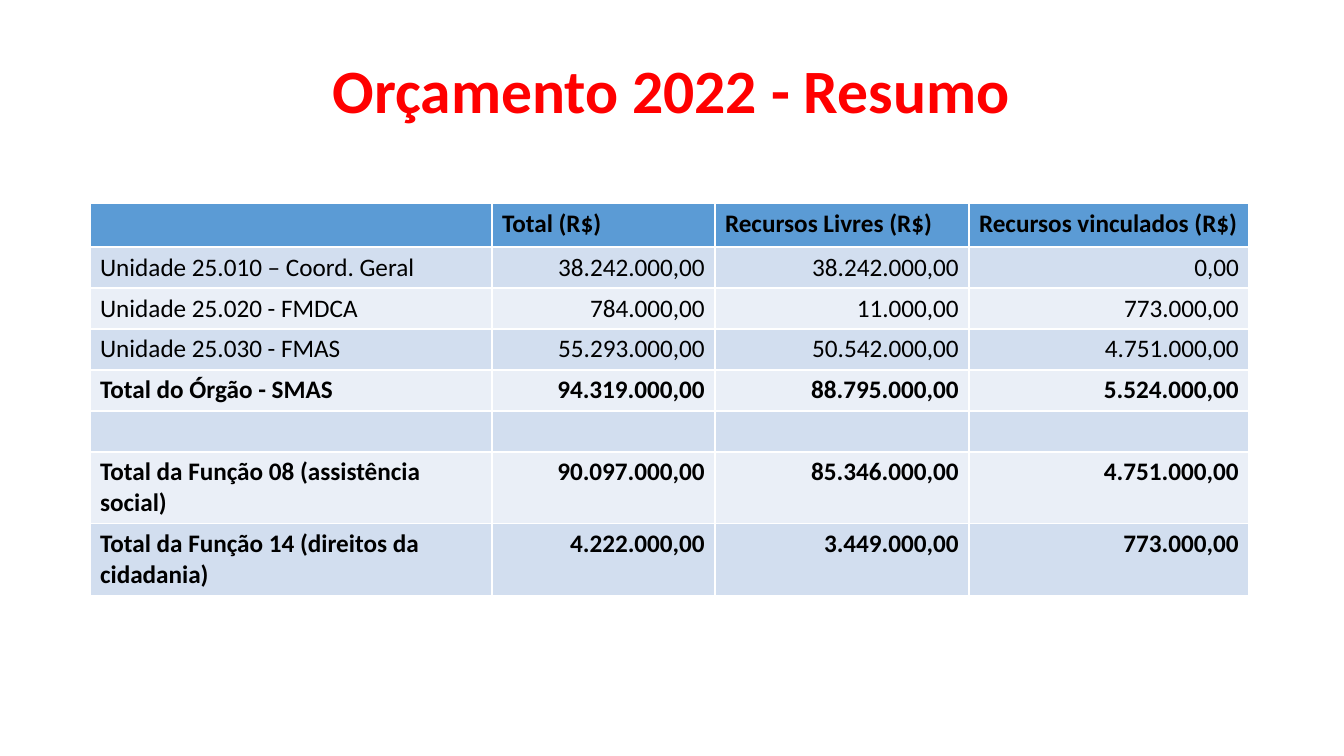
from pptx import Presentation
from pptx.dml.color import RGBColor
from pptx.enum.text import MSO_ANCHOR, PP_ALIGN
from pptx.util import Pt

EMU_PER_PX = 914400 / 100.8
TITLE_ONLY_LAYOUT = 5
LEFT, CENTER, RIGHT = PP_ALIGN.LEFT, PP_ALIGN.CENTER, PP_ALIGN.RIGHT
MIDDLE = MSO_ANCHOR.MIDDLE

HEADER_FILL = "5B9BD5"
BAND_FILLS = ("D2DEEF", "EAEFF7")
COLUMN_WIDTHS = (402, 223, 254, 280)
HEADER_HEIGHT, ROW_HEIGHT, TABLE_HEIGHT = 44, 41, 390
BUDGET = [
    ("", "Total (R$)", "Recursos Livres (R$)", "Recursos vinculados (R$)"),
    ("Unidade 25.010 – Coord. Geral", "38.242.000,00", "38.242.000,00", "0,00"),
    ("Unidade 25.020 - FMDCA", "784.000,00", "11.000,00", "773.000,00"),
    ("Unidade 25.030 - FMAS", "55.293.000,00", "50.542.000,00", "4.751.000,00"),
    ("Total do Órgão - SMAS", "94.319.000,00", "88.795.000,00", "5.524.000,00"),
    ("", "", "", ""),
    ("Total da Função 08 (assistência social)", "90.097.000,00", "85.346.000,00", "4.751.000,00"),
    ("Total da Função 14 (direitos da cidadania)", "4.222.000,00", "3.449.000,00", "773.000,00"),
]


def px(length):
    return round(length * EMU_PER_PX)


def color(hex_string):
    return RGBColor.from_string(hex_string)


class BudgetSlide:
    font_name = "Calibri"

    def __init__(self, presentation):
        layout = presentation.slide_layouts[TITLE_ONLY_LAYOUT]
        self.slide = presentation.slides.add_slide(layout)

    def format_text(self, text_frame, size, hex_string, bold, alignment):
        for paragraph in text_frame.paragraphs:
            paragraph.alignment = alignment
            for run in paragraph.runs:
                run.font.name = self.font_name
                run.font.size = Pt(size)
                run.font.bold = bold
                run.font.color.rgb = color(hex_string)

    def title(self, text, left, top, width, height):
        shape = self.slide.shapes.title
        shape.left, shape.top = px(left), px(top)
        shape.width, shape.height = px(width), px(height)
        text_frame = shape.text_frame
        text_frame.text = text
        text_frame.vertical_anchor = MIDDLE
        text_frame.paragraphs[0].line_spacing = 0.9
        self.format_text(text_frame, 44, "FF0000", True, CENTER)

    def table(self, rows, left, top):
        """Add a banded table; the header and the total rows are bold."""
        frame = self.slide.shapes.add_table(
            len(rows), len(COLUMN_WIDTHS), px(left), px(top),
            px(sum(COLUMN_WIDTHS)), px(TABLE_HEIGHT))
        table = frame.table
        for column, width in zip(table.columns, COLUMN_WIDTHS):
            column.width = px(width)
        for row_index, texts in enumerate(rows):
            is_header = row_index == 0
            table.rows[row_index].height = px(HEADER_HEIGHT if is_header else ROW_HEIGHT)
            fill = HEADER_FILL if is_header else BAND_FILLS[(row_index - 1) % 2]
            bold = is_header or texts[0].startswith("Total")
            for column_index, text in enumerate(texts):
                cell = table.cell(row_index, column_index)
                cell.fill.solid()
                cell.fill.fore_color.rgb = color(fill)
                cell.text_frame.text = text
                alignment = LEFT if is_header or column_index == 0 else RIGHT
                self.format_text(cell.text_frame, 18, "000000", bold, alignment)
        frame.height = px(TABLE_HEIGHT)


def main():
    presentation = Presentation()
    presentation.slide_width, presentation.slide_height = px(1344), px(756)
    budget_slide = BudgetSlide(presentation)
    budget_slide.title("Orçamento 2022 - Resumo", 92, 21, 1159, 146)
    budget_slide.table(BUDGET, 90, 203)
    presentation.save("out.pptx")


if __name__ == "__main__":
    main()
